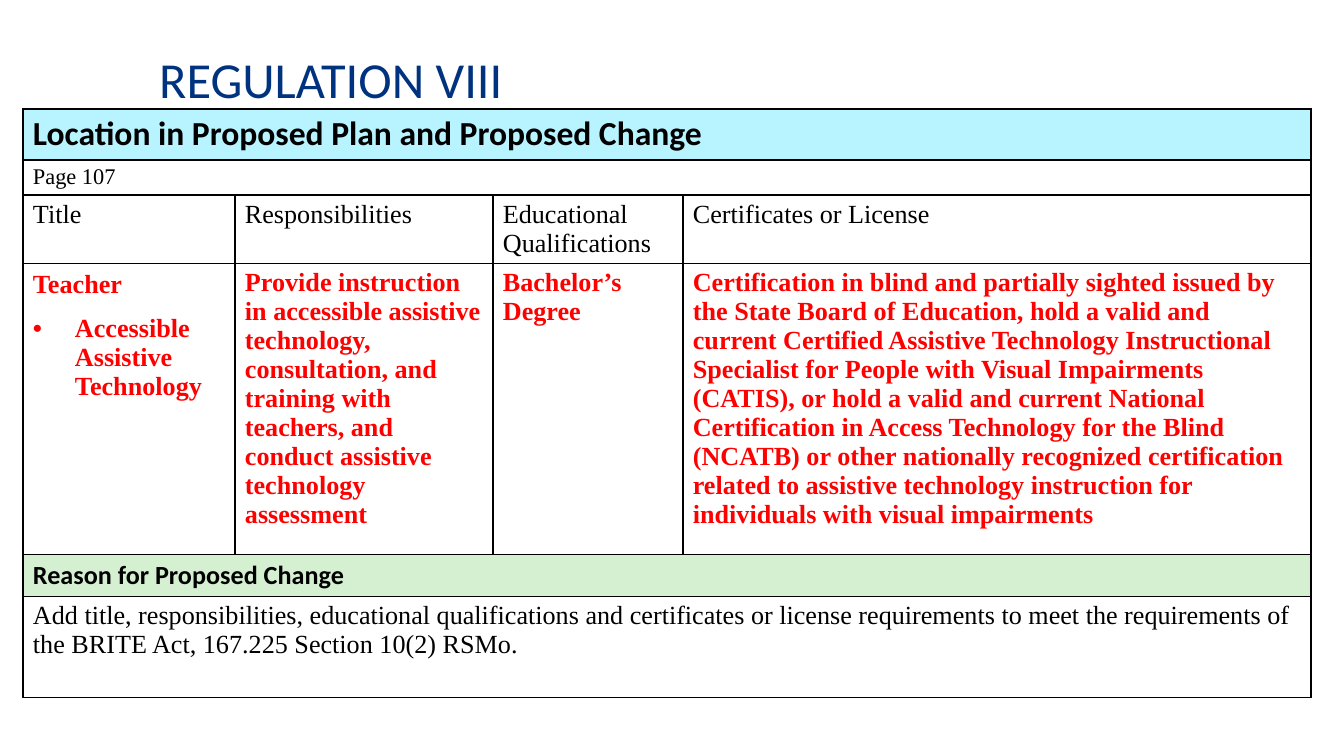
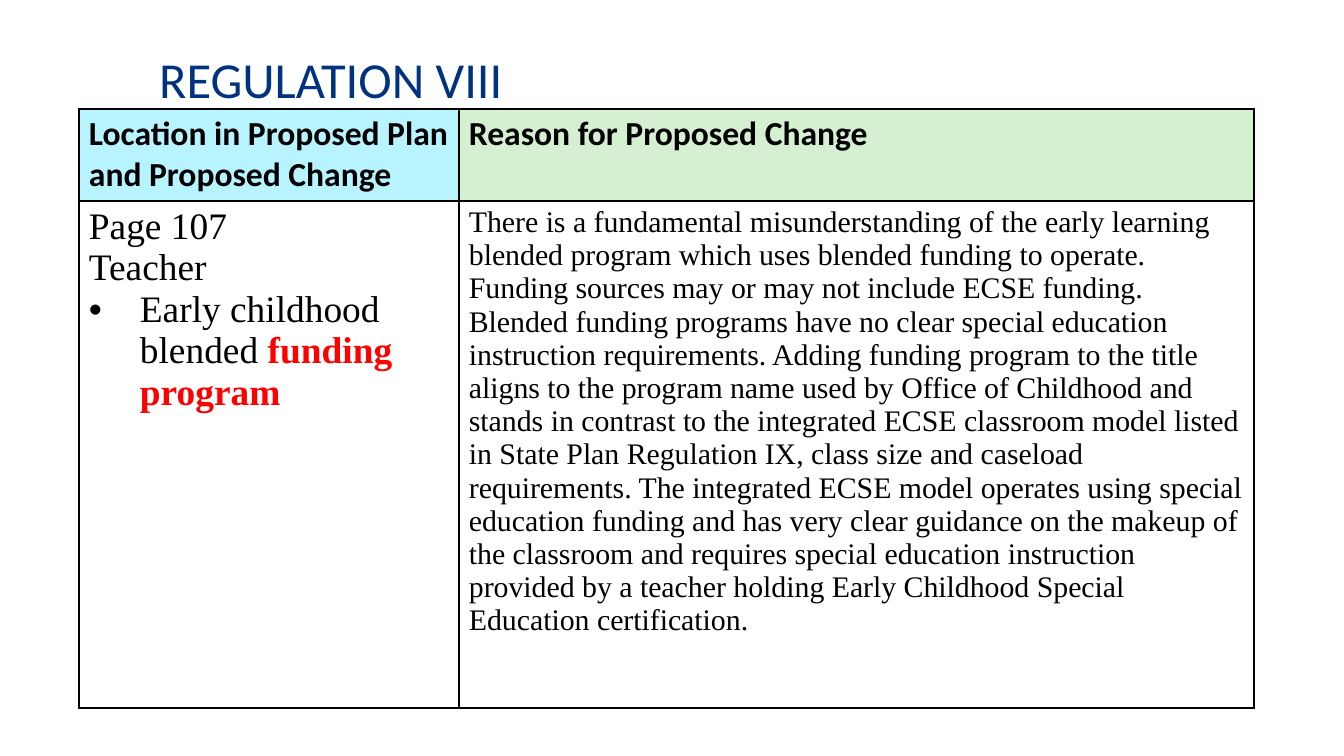
import dataclasses

import pptx
import pptx.dml.color
import pptx.enum.text
import pptx.oxml
import pptx.oxml.ns
import pptx.util
from lxml import etree

RGB = pptx.dml.color.RGBColor
NAVY = RGB(0x00, 0x33, 0x7F)
BLACK = RGB(0x00, 0x00, 0x00)
RED = RGB(0xFF, 0x00, 0x00)
CYAN = RGB(0xB8, 0xF4, 0xFF)
GREEN = RGB(0xD4, 0xF0, 0xD1)

SANS = "Calibri"
SERIF = "Times New Roman"
TABLE_TOP = 109
LOCATION = "Location in Proposed Plan and Proposed Change"
REASON = "Reason for Proposed Change"


def px(n):
    """Turn px at 134.4 to the inch into EMU."""
    return pptx.util.Emu(round(n * 914400 / 134.4))


@dataclasses.dataclass
class Para:
    text: str
    size: int
    font: str = SERIF
    color: RGB = BLACK
    bold: bool = False
    indent: int = 0
    spacing: float = 1.0
    after: int = 0
    red_end: str = ""


def heading(text, size=18):
    return Para(text, size, SANS, bold=True)


def change(text, **options):
    """Newly proposed wording, in bold red."""
    return Para(text, 14, color=RED, bold=True, **options)


def set_bullet(p, indent):
    pPr = p._p.get_or_add_pPr()
    pPr.set("marL", str(px(indent)))
    pPr.set("indent", str(-px(indent)))
    font = etree.Element(pptx.oxml.ns.qn("a:buFont"), typeface="Arial")
    char = etree.Element(pptx.oxml.ns.qn("a:buChar"), char="•")
    default = pPr.find(pptx.oxml.ns.qn("a:defRPr"))
    default.addprevious(font)
    default.addprevious(char)


def write(tf, paras):
    for i, para in enumerate(paras):
        p = tf.add_paragraph() if i else tf.paragraphs[0]
        p.line_spacing = para.spacing
        p.space_after = pptx.util.Pt(para.after)
        p.font.size = pptx.util.Pt(para.size)
        p.font.name = para.font
        p.font.bold = para.bold
        p.font.color.rgb = para.color
        p.add_run().text = para.text
        if para.red_end:
            r = p.add_run()
            r.text = para.red_end
            r.font.bold = True
            r.font.color.rgb = RED
        if para.indent:
            set_bullet(p, para.indent)


def add_title(s, text):
    tf = s.shapes.add_textbox(px(146), px(30), px(1198), px(95)).text_frame
    tf.word_wrap = True
    tf.vertical_anchor = pptx.enum.text.MSO_ANCHOR.MIDDLE
    tf.margin_top = px(8)
    write(tf, [Para(text, 27, SANS, NAVY)])


def set_borders(cell):
    tcPr = cell._tc.get_or_add_tcPr()
    for side in ("lnL", "lnR", "lnT", "lnB"):
        tcPr.append(pptx.oxml.parse_xml(
            f'<a:{side} {pptx.oxml.ns.nsdecls("a")} w="{pptx.util.Pt(1)}">'
            f'<a:solidFill><a:srgbClr val="{BLACK}"/></a:solidFill></a:{side}>'))


def add_grid(s, left, widths, heights, rows, fills):
    """Add a table; a row with one cell spans all columns, fills go by (row, column)."""
    frame = s.shapes.add_table(len(heights), len(widths), px(left), px(TABLE_TOP),
                               px(sum(widths)), px(sum(heights)))
    table = frame.table
    table.first_row = table.horz_banding = False
    for column, width in zip(table.columns, widths):
        column.width = px(width)
    for row, height in zip(table.rows, heights):
        row.height = px(height)
    for i, paras_by_column in enumerate(rows):
        for j in range(len(widths)):
            cell = table.cell(i, j)
            cell.margin_left, cell.margin_right = px(10), px(9)
            cell.margin_top, cell.margin_bottom = px(5), px(1)
            set_borders(cell)
            if (i, j) in fills:
                cell.fill.solid()
                cell.fill.fore_color.rgb = fills[i, j]
            else:
                cell.fill.background()
        if len(paras_by_column) == 1:
            table.cell(i, 0).merge(table.cell(i, len(widths) - 1))
        for j, paras in enumerate(paras_by_column):
            write(table.cell(i, j).text_frame, paras)
    return table


def add_regulation_slide(prs, *grid):
    s = prs.slides.add_slide(prs.slide_layouts[6])
    add_title(s, "REGULATION VIII")
    return add_grid(s, *grid)


def main():
    prs = pptx.Presentation()
    prs.slide_width, prs.slide_height = px(1344), px(756)

    column_names = ("Title", "Responsibilities", "Educational Qualifications",
                    "Certificates or License")
    teacher_rows = [
        [[heading(LOCATION)]],
        [[Para("Page 107", 12)]],
        [[Para(name, 14)] for name in column_names],
        [
            [change("Teacher", spacing=1.07, after=8),
             change("Accessible Assistive Technology", indent=42)],
            [change("Provide instruction in accessible assistive technology, "
                    "consultation, and training with teachers, and conduct "
                    "assistive technology assessment")],
            [change("Bachelor’s Degree")],
            [change("Certification in blind and partially sighted issued by the "
                    "State Board of Education, hold a valid and current Certified "
                    "Assistive Technology Instructional Specialist for People with "
                    "Visual Impairments (CATIS), or hold a valid and current "
                    "National Certification in Access Technology for the Blind "
                    "(NCATB) or other nationally recognized certification related "
                    "to assistive technology instruction for individuals with "
                    "visual impairments")],
        ],
        [[heading(REASON, 14)]],
        [[Para("Add title, responsibilities, educational qualifications and "
               "certificates or license requirements to meet the requirements of "
               "the BRITE Act, 167.225 Section 10(2) RSMo.", 14)]],
    ]
    teacher_table = add_regulation_slide(
        prs, 23, (212, 258, 190, 628), (51, 35, 68, 291, 42, 101),
        teacher_rows, {(0, 0): CYAN, (4, 0): GREEN})
    certificates = teacher_table.cell(3, 3)
    certificates.margin_right = px(16)

    funding_rows = [
        [[heading(LOCATION)], [heading(REASON)]],
        [
            [Para("Page 107", 20),
             Para("Teacher", 20),
             Para("Early childhood blended ", 20, indent=51,
                  red_end="funding program")],
            [Para("There is a fundamental misunderstanding of the early learning "
                  "blended program which uses blended funding to operate. Funding "
                  "sources may or may not include ECSE funding. Blended funding "
                  "programs have no clear special education instruction "
                  "requirements. Adding funding program to the title aligns to the "
                  "program name used by Office of Childhood and stands in contrast "
                  "to the integrated ECSE classroom model listed in State Plan "
                  "Regulation IX, class size and caseload requirements. The "
                  "integrated ECSE model operates using special education funding "
                  "and has very clear guidance on the makeup of the classroom and "
                  "requires special education instruction provided by a teacher "
                  "holding Early Childhood Special Education certification.", 16)],
        ],
    ]
    add_regulation_slide(prs, 79, (380, 795), (92, 507), funding_rows,
                         {(0, 0): CYAN, (0, 1): GREEN})
    prs.save("out.pptx")


if __name__ == "__main__":
    main()
